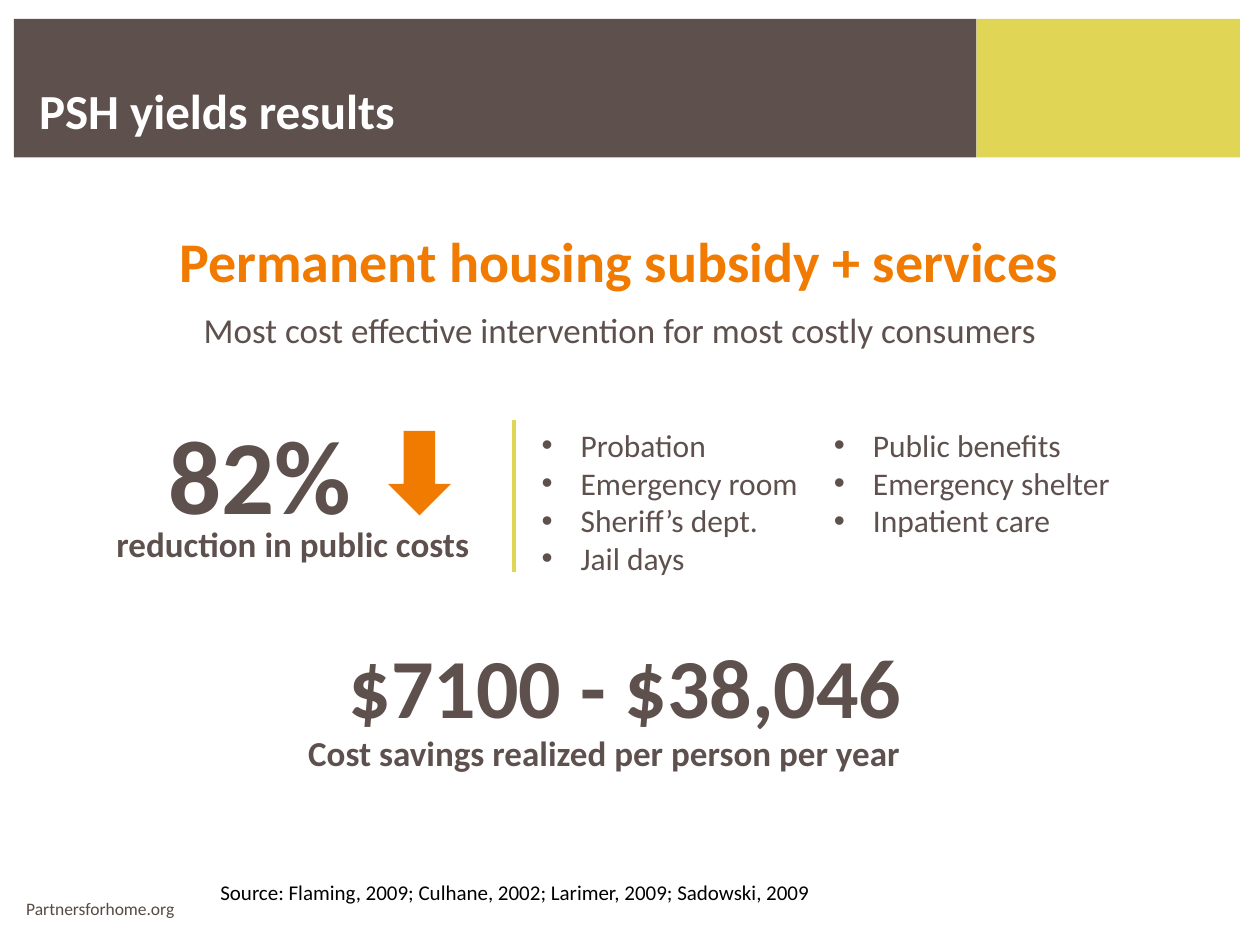
from lxml import etree
from pptx import Presentation
from pptx.dml.color import RGBColor
from pptx.enum import shapes, text
from pptx.oxml import ns
from pptx.util import Inches, Pt

COLORS = {"brown": "5E514D", "lime": "E1D555", "orange": "F07B00",
          "footer": "564A45", "white": "FFFFFF", "black": "000000"}
FONT = "Calibri"
LEFT, CENTER = text.PP_ALIGN.LEFT, text.PP_ALIGN.CENTER
RECTANGLE = shapes.MSO_SHAPE.RECTANGLE

TITLE = "PSH yields results"
BLOCKS = [
    ((0.11, 0.15, 7.64, 1.1), RECTANGLE, "brown"),
    ((7.75, 0.15, 2.09, 1.1), RECTANGLE, "lime"),
    ((3.08, 3.42, 0.5, 0.67), shapes.MSO_SHAPE.DOWN_ARROW, "orange"),
]
LABELS = [
    ("Partnersforhome.org", (0.11, 7.08, 1.42, 0.27), 10, "footer", False, LEFT),
    ("Permanent housing subsidy + services", (0.33, 1.75, 9.17, 0.64), 32, "orange", True, CENTER),
    ("Source: Flaming, 2009; Culhane, 2002; Larimer, 2009; Sadowski, 2009",
     (1.65, 6.93, 7.92, 0.3), 12, "black", False, LEFT),
    ("Most cost effective intervention for most costly consumers",
     (1.42, 2.4, 7, 0.44), 20, "brown", False, CENTER),
    ("82%", (1.23, 3.2, 1.67, 1.11), 60, "brown", True, CENTER),
    ("reduction in public costs", (0.81, 4.1, 3.03, 0.44), 20, "brown", True, CENTER),
    ("$7100 - $38,046", (0.63, 4.99, 8.67, 0.91), 48, "brown", True, CENTER),
    ("Cost savings realized per person per year", (2.26, 5.76, 5.07, 0.44), 20, "brown", True, CENTER),
]
COST_LISTS = [
    (["Probation", "Emergency room", "Sheriff’s dept.", "Jail days"], (4.2, 3.33, 2.4, 1.31)),
    (["Public benefits", "Emergency shelter", "Inpatient care"], (6.52, 3.33, 2.73, 1.31)),
]
DIVIDER = (4.08, 3.33, 4.08, 4.54)
BULLET_INDENT = Inches(0.31)


def color(name):
    return RGBColor.from_string(COLORS[name])


def inches(values):
    return [Inches(value) for value in values]


def format_paragraph(paragraph, size, color_name, bold, alignment):
    paragraph.alignment = alignment
    for run in paragraph.runs:
        run.font.name = FONT
        run.font.size = Pt(size)
        run.font.bold = bold
        run.font.color.rgb = color(color_name)


def add_bullet(paragraph):
    properties = paragraph._p.get_or_add_pPr()
    properties.set("marL", str(BULLET_INDENT))
    properties.set("indent", str(-BULLET_INDENT))
    etree.SubElement(properties, ns.qn("a:buFont"), typeface="Arial")
    etree.SubElement(properties, ns.qn("a:buChar"), char="•")


def add_block(slide, box, kind, color_name):
    shape = slide.shapes.add_shape(kind, *inches(box))
    shape.shadow.inherit = False
    shape.fill.solid()
    shape.fill.fore_color.rgb = color(color_name)
    shape.line.fill.background()


def add_text(slide, lines, box, size, color_name, bold=False, alignment=LEFT, bulleted=False):
    frame = slide.shapes.add_textbox(*inches(box)).text_frame
    frame.word_wrap = True
    frame.text = "\n".join(lines)
    for paragraph in frame.paragraphs:
        if bulleted:
            add_bullet(paragraph)
        format_paragraph(paragraph, size, color_name, bold, alignment)


def place_title(slide):
    title = slide.shapes.title
    title.left, title.top, title.width, title.height = inches((0.21, 0.58, 9, 0.58))
    frame = title.text_frame
    frame.text = TITLE
    frame.vertical_anchor = text.MSO_ANCHOR.MIDDLE
    format_paragraph(frame.paragraphs[0], 28, "white", True, LEFT)
    title._element.getparent().append(title._element)


def add_divider(slide):
    divider = slide.shapes.add_connector(shapes.MSO_CONNECTOR.STRAIGHT, *inches(DIVIDER))
    divider.line.color.rgb = color("lime")
    divider.line.width = Pt(2.5)
    etree.SubElement(divider._element.spPr, ns.qn("a:effectLst"))


def main():
    presentation = Presentation()
    presentation.slide_width, presentation.slide_height = inches((10, 7.5))
    slide = presentation.slides.add_slide(presentation.slide_layouts[5])
    for block in BLOCKS:
        add_block(slide, *block)
    place_title(slide)
    for label, *style in LABELS:
        add_text(slide, [label], *style)
    for items, box in COST_LISTS:
        add_text(slide, items, box, 18, "brown", bulleted=True)
    add_divider(slide)
    presentation.save("out.pptx")


if __name__ == "__main__":
    main()
